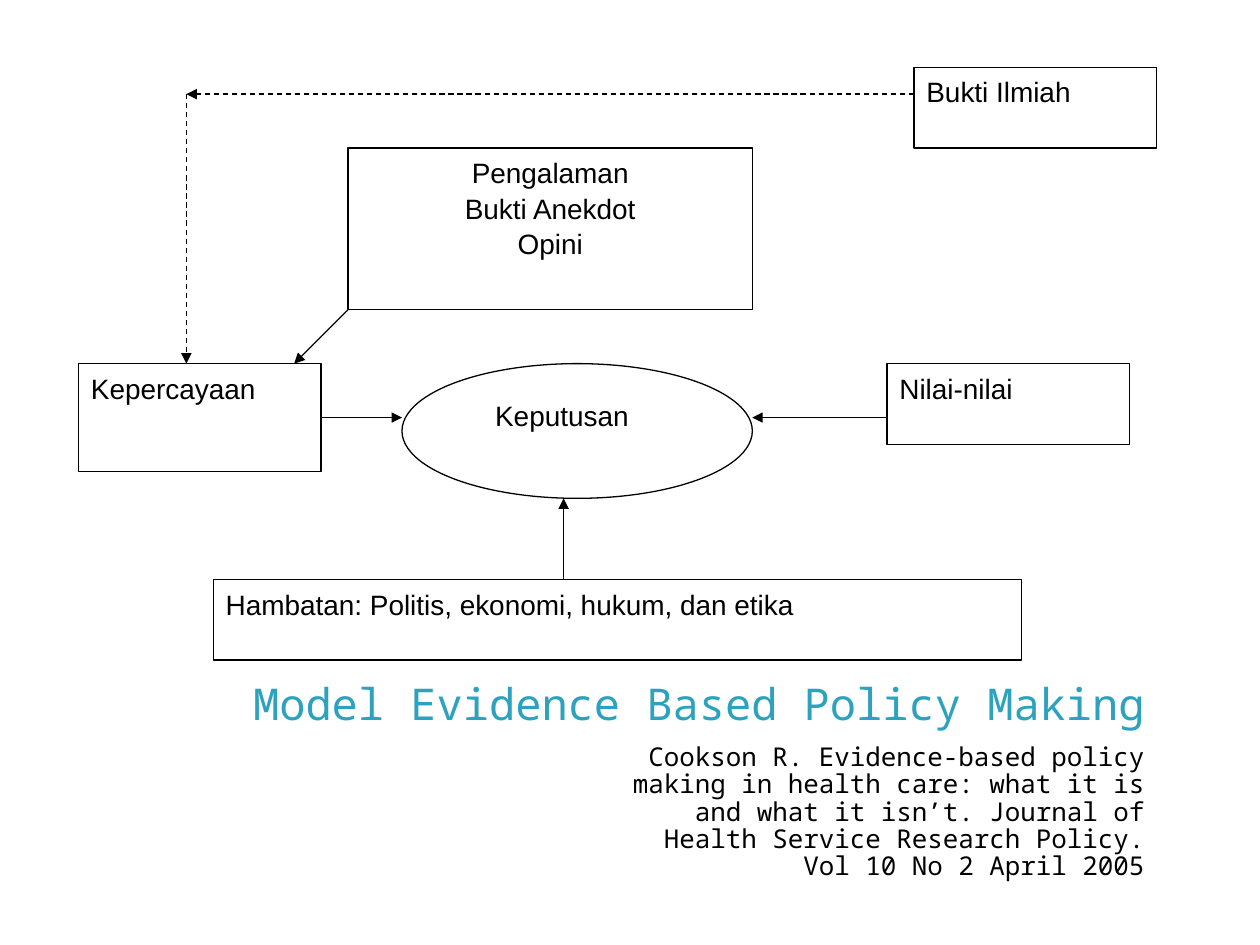
from dataclasses import dataclass
from typing import Optional

from lxml import etree
from pptx import Presentation
from pptx import util as u
from pptx.dml.color import RGBColor
from pptx.enum import dml, shapes, text
from pptx.oxml import ns


@dataclass(frozen=True)
class Theme:
    ink: RGBColor = RGBColor(0, 0, 0)
    paper: RGBColor = RGBColor(255, 255, 255)
    accent: RGBColor = RGBColor(0x2D, 0xA2, 0xBF)
    diagram_font: str = "Arial"
    text_font: str = "Noto Sans Mono"
    title_size: float = 25
    source_size: float = 14.8
    label_size: float = 16
    line_width: float = 0.75


@dataclass(frozen=True)
class Node:
    """A diagram shape, placed in grid cells."""
    x: int
    y: int
    w: int
    h: int
    lines: tuple[str, ...] = ()
    centred: bool = False
    outlined: bool = True
    filled: bool = True
    kind: shapes.MSO_SHAPE = shapes.MSO_SHAPE.RECTANGLE


@dataclass(frozen=True)
class Arrow:
    """An arrow between two grid points."""
    x1: int
    y1: int
    x2: int
    y2: int
    dashed: bool = False


THEME = Theme()
CELL, LEFT, TOP = 15.4, 44.9, 38.4

NODES = [
    Node(31, 0, 9, 3, ("Bukti Ilmiah",)),
    Node(30, 11, 9, 3, ("Nilai-nilai",)),
    Node(0, 11, 9, 4, ("Kepercayaan",)),
    Node(10, 3, 15, 6, ("Pengalaman", "Bukti Anekdot", "Opini"), centred=True),
    Node(5, 19, 30, 3, ("Hambatan: Politis, ekonomi, hukum, dan etika",)),
    Node(15, 12, 11, 4, ("Keputusan",), outlined=False),
    Node(12, 11, 13, 5, filled=False, kind=shapes.MSO_SHAPE.OVAL),
]
ARROWS = [
    Arrow(9, 13, 12, 13),
    Arrow(30, 13, 25, 13),
    Arrow(31, 1, 4, 1, dashed=True),
    Arrow(4, 1, 4, 11, dashed=True),
    Arrow(18, 19, 18, 16),
    Arrow(10, 9, 8, 11),
]


def grid_x(col: int) -> u.Length:
    return u.Pt(LEFT + col * CELL)


def grid_y(row: int) -> u.Length:
    return u.Pt(TOP + row * CELL)


def write(sp, lines: tuple[str, ...], align: text.PP_ALIGN, spacing: float,
          font: dict, anchor=text.MSO_ANCHOR.TOP) -> None:
    tf = sp.text_frame
    frame = {"word_wrap": True, "auto_size": text.MSO_AUTO_SIZE.NONE,
             "vertical_anchor": anchor}
    for name, value in frame.items():
        setattr(tf, name, value)
    for i, line in enumerate(lines):
        p = tf.add_paragraph() if i else tf.paragraphs[0]
        p.alignment, p.line_spacing = align, spacing
        r = p.add_run()
        r.text = line
        for name, value in font.items():
            if name == "color":
                r.font.color.rgb = value
            else:
                setattr(r.font, name, value)


def draw_line_style(line) -> None:
    line.color.rgb = THEME.ink
    line.width = u.Pt(THEME.line_width)


def draw_node(s, node: Node) -> None:
    sp = s.shapes.add_shape(node.kind, grid_x(node.x), grid_y(node.y),
                            u.Pt(node.w * CELL), u.Pt(node.h * CELL))
    sp.shadow.inherit = False
    if node.filled:
        sp.fill.solid()
        sp.fill.fore_color.rgb = THEME.paper
    else:
        sp.fill.background()
    if node.outlined:
        draw_line_style(sp.line)
    else:
        sp.line.fill.background()
    align = text.PP_ALIGN.CENTER if node.centred else text.PP_ALIGN.LEFT
    write(sp, node.lines, align, 1.05,
          {"name": THEME.diagram_font, "size": u.Pt(THEME.label_size),
           "color": THEME.ink})


def draw_arrow(s, arrow: Arrow) -> None:
    cx = s.shapes.add_connector(
        shapes.MSO_CONNECTOR.STRAIGHT, grid_x(arrow.x1), grid_y(arrow.y1),
        grid_x(arrow.x2), grid_y(arrow.y2))
    draw_line_style(cx.line)
    if arrow.dashed:
        cx.line.dash_style = dml.MSO_LINE.DASH
    ln = cx.line._get_or_add_ln()
    etree.SubElement(ln, ns.qn("a:tailEnd"), type="triangle")
    etree.SubElement(cx._element.spPr, ns.qn("a:effectLst"))


def main() -> None:
    prs = Presentation()
    prs.slide_width, prs.slide_height = u.Pt(720), u.Pt(540)
    s = prs.slides.add_slide(prs.slide_layouts[5])

    title = s.shapes.title
    place = {"left": 72, "top": 383.8, "width": 589, "height": 36}
    for name, value in place.items():
        setattr(title, name, u.Pt(value))
    write(title, ("Model Evidence Based Policy Making",),
          text.PP_ALIGN.RIGHT, 1.0,
          {"name": THEME.text_font, "size": u.Pt(THEME.title_size),
           "color": THEME.accent}, text.MSO_ANCHOR.MIDDLE)

    source = s.shapes.add_textbox(u.Pt(347.8), u.Pt(422), u.Pt(313.2), u.Pt(72))
    write(source, ("Cookson R. Evidence-based policy making in health care: "
                   "what it is and what it isn’t. Journal of Health Service "
                   "Research Policy. Vol 10 No 2 April 2005",),
          text.PP_ALIGN.RIGHT, 0.88,
          {"name": THEME.text_font, "size": u.Pt(THEME.source_size),
           "color": THEME.ink})

    for node in NODES:
        draw_node(s, node)
    for arrow in ARROWS:
        draw_arrow(s, arrow)
    prs.save("out.pptx")


if __name__ == "__main__":
    main()
